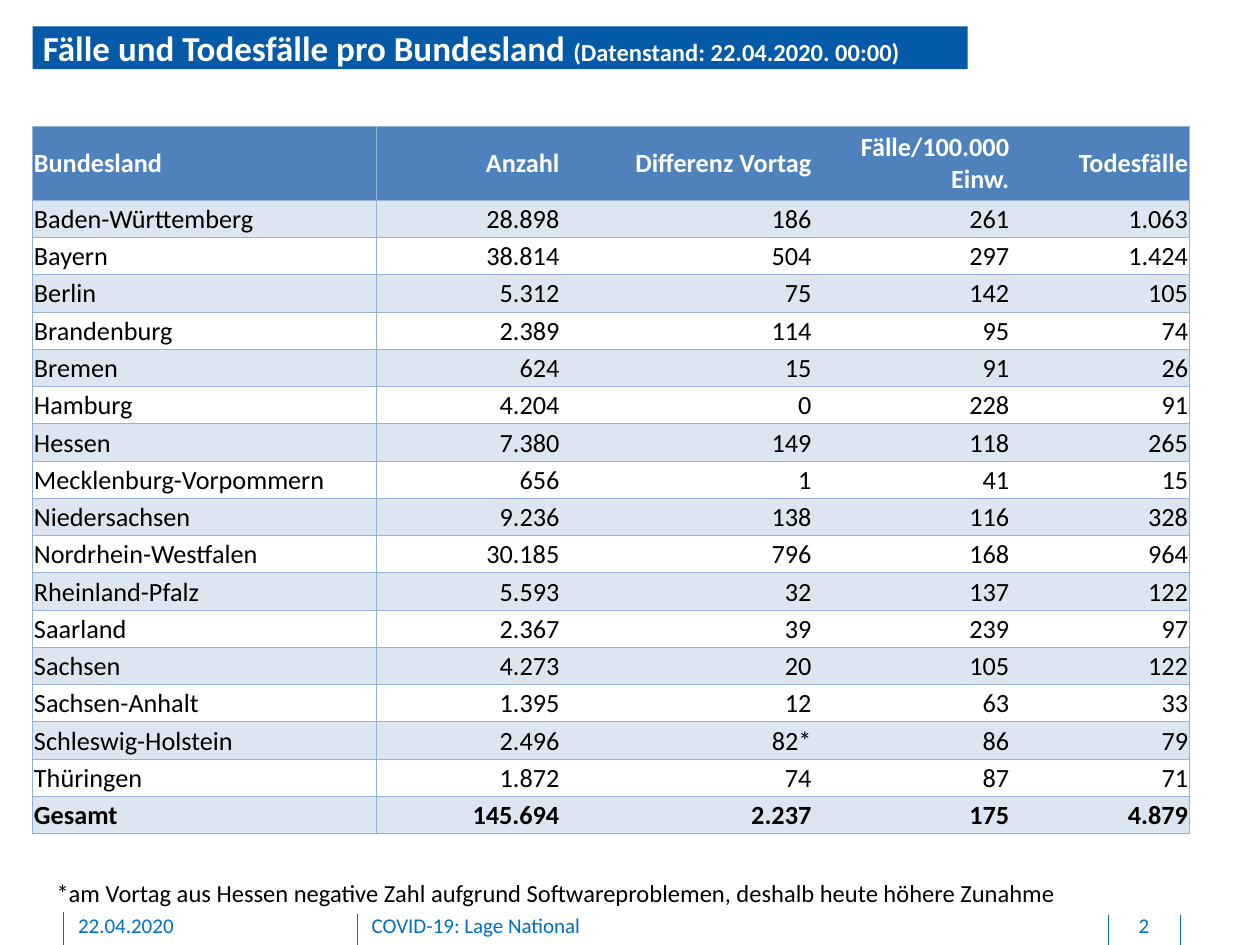
"""Build the slide with COVID-19 cases and deaths per German federal state."""
from lxml.etree import SubElement
from pptx import Presentation
from pptx.dml.color import RGBColor
from pptx.enum.shapes import MSO_CONNECTOR, MSO_SHAPE
from pptx.enum.text import MSO_ANCHOR as ANCHOR, PP_ALIGN as ALIGN
from pptx.oxml.ns import qn
from pptx.util import Inches, Pt

WHITE = RGBColor(0xFF, 0xFF, 0xFF)
BLACK = RGBColor(0x00, 0x00, 0x00)
TITLE_BLUE = RGBColor(0x04, 0x5A, 0xA6)
FOOTER_BLUE = RGBColor(0x00, 0x6E, 0xC7)
HEADER_BLUE = RGBColor(0x4F, 0x81, 0xBD)
BAND_BLUE = RGBColor(0xDC, 0xE6, 0xF1)
BORDER_BLUE = RGBColor(0x95, 0xB3, 0xD7)

HEADER = ["Bundesland", "Anzahl", "Differenz Vortag", "Fälle/100.000 Einw.", "Todesfälle"]
STATES = [
    ["Baden-Württemberg", "28.898", "186", "261", "1.063"],
    ["Bayern", "38.814", "504", "297", "1.424"],
    ["Berlin", "5.312", "75", "142", "105"],
    ["Brandenburg", "2.389", "114", "95", "74"],
    ["Bremen", "624", "15", "91", "26"],
    ["Hamburg", "4.204", "0", "228", "91"],
    ["Hessen", "7.380", "149", "118", "265"],
    ["Mecklenburg-Vorpommern", "656", "1", "41", "15"],
    ["Niedersachsen", "9.236", "138", "116", "328"],
    ["Nordrhein-Westfalen", "30.185", "796", "168", "964"],
    ["Rheinland-Pfalz", "5.593", "32", "137", "122"],
    ["Saarland", "2.367", "39", "239", "97"],
    ["Sachsen", "4.273", "20", "105", "122"],
    ["Sachsen-Anhalt", "1.395", "12", "63", "33"],
    ["Schleswig-Holstein", "2.496", "82*", "86", "79"],
    ["Thüringen", "1.872", "74", "87", "71"],
]
TOTAL = ["Gesamt", "145.694", "2.237", "175", "4.879"]
COL_WIDTHS = [2.73, 1.46, 2, 1.57, 1.42]


def add_run(p, text, size, color, bold=False):
    r = p.add_run()
    r.text = text
    r.font.name = "Calibri"
    r.font.size = Pt(size)
    r.font.bold = bold
    r.font.color.rgb = color


def set_borders(cell, visible):
    tcPr = cell._tc.get_or_add_tcPr()
    for side in "LRTB":
        ln = SubElement(tcPr, qn(f"a:ln{side}"), w=str(Pt(0.5)))
        if side in visible:
            fill = SubElement(ln, qn("a:solidFill"))
            SubElement(fill, qn("a:srgbClr"), val=str(BORDER_BLUE))
        else:
            SubElement(ln, qn("a:noFill"))


prs = Presentation()
prs.slide_width, prs.slide_height = Inches(10), Inches(7.5)
s = prs.slides.add_slide(prs.slide_layouts[6])

for x, top in [(2.84, 7.25), (0.5, 7.24), (9.37, 7.26), (8.8, 7.26)]:
    line = s.shapes.add_connector(
        MSO_CONNECTOR.STRAIGHT, Inches(x), Inches(top), Inches(x), Inches(7.5))
    line.line.color.rgb = FOOTER_BLUE
    line.line.width = Pt(0.5)
    SubElement(line._element.spPr, qn("a:effectLst"))

for x, width, text, align in [
    (0.62, 2.03, "22.04.2020", ALIGN.LEFT),
    (2.95, 5.67, "COVID-19: Lage National", ALIGN.LEFT),
    (8.81, 0.54, "2", ALIGN.CENTER),
]:
    tf = s.shapes.add_textbox(Inches(x), Inches(7.24), Inches(width), Inches(0.21)).text_frame
    tf.word_wrap = True
    tf.margin_left = tf.margin_top = tf.margin_right = 0
    tf.margin_bottom = Inches(0.05)
    p = tf.paragraphs[0]
    p.alignment = align
    add_run(p, text, 12, FOOTER_BLUE)

sp = s.shapes.add_shape(
    MSO_SHAPE.RECTANGLE, Inches(0.26), Inches(0.21), Inches(7.42), Inches(0.34))
sp.shadow.inherit = False
sp.fill.solid()
sp.fill.fore_color.rgb = TITLE_BLUE
sp.line.fill.background()
tf = sp.text_frame
tf.word_wrap = True
tf.vertical_anchor = ANCHOR.TOP
tf.margin_left = Inches(0.08)
tf.margin_top = tf.margin_right = tf.margin_bottom = 0
p = tf.paragraphs[0]
p.alignment = ALIGN.LEFT
add_run(p, "Fälle und Todesfälle pro Bundesland ", 20, WHITE, True)
add_run(p, "(Datenstand: 22.04.2020. 00:00)", 14, WHITE, True)

tf = s.shapes.add_textbox(Inches(0.35), Inches(6.92), Inches(8.69), Inches(0.34)).text_frame
tf.word_wrap = True
add_run(
    tf.paragraphs[0],
    "*am Vortag aus Hessen negative Zahl aufgrund Softwareproblemen, "
    "deshalb heute höhere Zunahme",
    14, BLACK)

rows = [HEADER, *STATES, TOTAL]
last_row, last_col = len(rows) - 1, len(HEADER) - 1
table = s.shapes.add_table(
    len(rows), len(HEADER), Inches(0.26), Inches(1), Inches(9.19), Inches(5.62)).table
table.first_row = table.horz_banding = False
for column, width in zip(table.columns, COL_WIDTHS):
    column.width = Inches(width)

for i, row in enumerate(rows):
    table.rows[i].height = Inches(0.59) if i == 0 else Inches(5.03) // last_row
    for j, text in enumerate(row):
        cell = table.cell(i, j)
        cell.vertical_anchor = ANCHOR.MIDDLE
        cell.margin_left = cell.margin_top = cell.margin_right = Inches(0.01)
        cell.margin_bottom = 0
        set_borders(cell, "TB" + "L" * (j <= 1) + "R" * (j in (0, last_col)))
        if i % 2 or i in (0, last_row):
            cell.fill.solid()
            cell.fill.fore_color.rgb = HEADER_BLUE if i == 0 else BAND_BLUE
        else:
            cell.fill.background()
        p = cell.text_frame.paragraphs[0]
        p.alignment = ALIGN.RIGHT if j else ALIGN.LEFT
        add_run(p, text, 15, BLACK if i else WHITE, i in (0, last_row))

prs.save("out.pptx")
